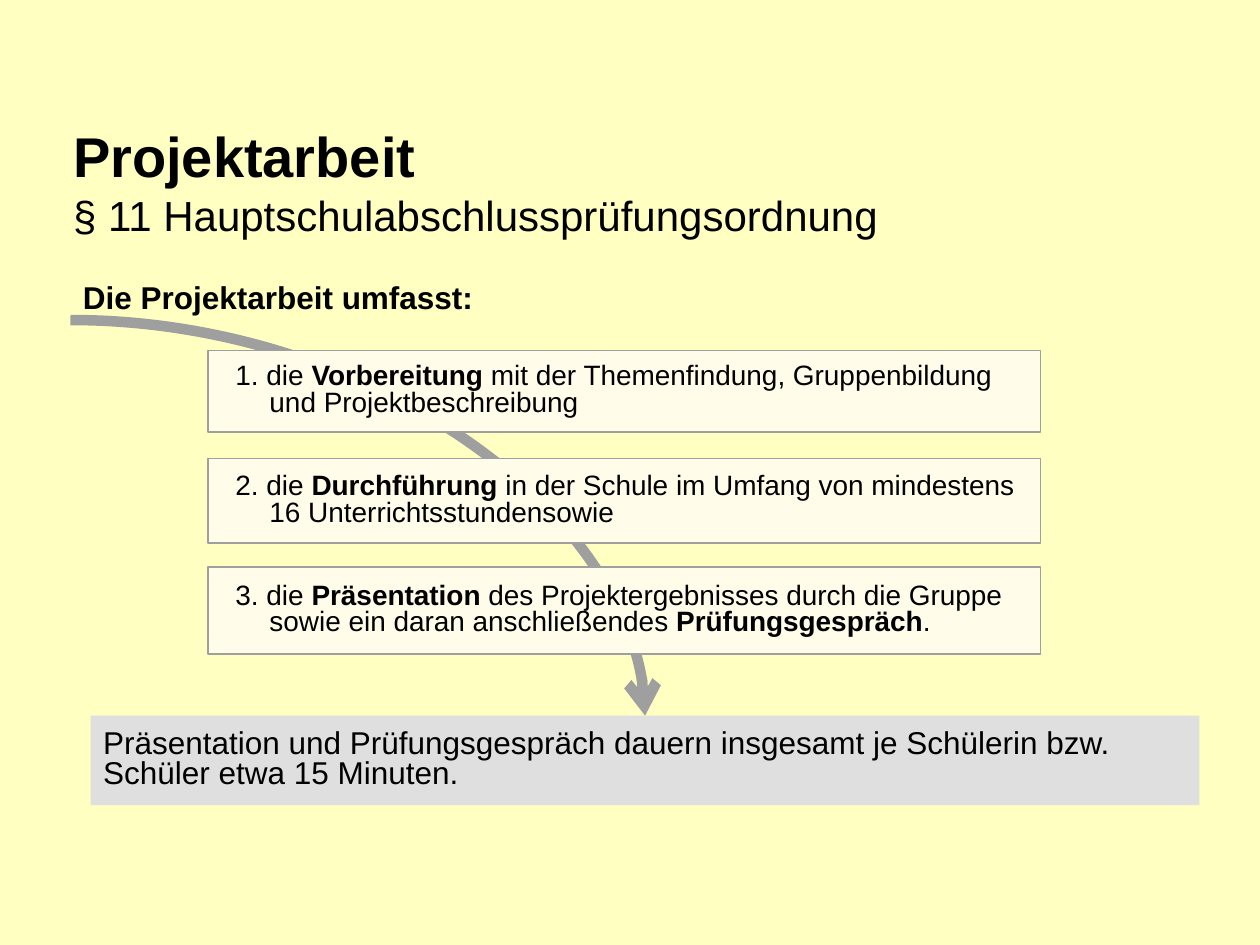
from lxml import etree
from pptx import Presentation
from pptx.dml.color import RGBColor
from pptx.enum.shapes import MSO_CONNECTOR, MSO_SHAPE
from pptx.enum.text import MSO_ANCHOR as ANCHOR, MSO_AUTO_SIZE as AUTO_SIZE, PP_ALIGN as ALIGN
from pptx.oxml.ns import qn
from pptx.util import Inches, Pt

BACKGROUND, TEXT, GREY = "FFFFC1", "000000", "9F9F9F"
STEP_FILL, NOTE_FILL = "FFFDE9", "DFDFDF"

# Each step: top, height and its (text, bold) pieces
STEPS = [
    (2.78, 0.65, [("1. die ", False), ("Vorbereitung", True),
                  (" mit der Themenfindung, Gruppenbildung und Projektbeschreibung", False)]),
    (3.64, 0.67, [("2. die ", False), ("Durchführung", True),
                  (" in der Schule im Umfang von mindestens 16 Unterrichtsstundensowie", False)]),
    (4.5, 0.69, [("3. die ", False), ("Präsentation", True),
                 (" des Projektergebnisses durch die Gruppe sowie ein daran anschließendes ", False),
                 ("Prüfungsgespräch", True), (".", False)]),
]


def color(hex_string):
    return RGBColor.from_string(hex_string)


def add_styled_run(paragraph, text, size, bold):
    run = paragraph.add_run()
    run.text = text
    run.font.name = "Arial"
    run.font.size = Pt(size)
    run.font.bold = bold
    run.font.color.rgb = color(TEXT)


def prepare_paragraph(shape, line_spacing):
    """Set up the text frame and return its first paragraph, left-aligned."""
    frame = shape.text_frame
    frame.word_wrap = True
    frame.auto_size = AUTO_SIZE.NONE
    frame.vertical_anchor = ANCHOR.MIDDLE
    paragraph = frame.paragraphs[0]
    paragraph.alignment = ALIGN.LEFT
    paragraph.line_spacing = line_spacing
    return paragraph


def add_box(slide, left, top, width, height, fill):
    box = slide.shapes.add_shape(MSO_SHAPE.RECTANGLE, Inches(left), Inches(top),
                                 Inches(width), Inches(height))
    box.shadow.inherit = False
    box.fill.solid()
    box.fill.fore_color.rgb = color(fill)
    box.line.fill.background()
    return box


def place_title(slide, left, top, width, height):
    title = slide.shapes.title
    title.left, title.top = Inches(left), Inches(top)
    title.width, title.height = Inches(width), Inches(height)
    paragraph = prepare_paragraph(title, 1.0)
    add_styled_run(paragraph, "Projektarbeit", 32, True)
    paragraph.add_line_break()
    add_styled_run(paragraph, "§ 11 Hauptschulabschlussprüfungsordnung", 24, False)


def add_curved_arrow(slide, start_x, start_y, end_x, end_y):
    arrow = slide.shapes.add_connector(MSO_CONNECTOR.CURVE, Inches(start_x), Inches(start_y),
                                       Inches(end_x), Inches(end_y))
    arrow.line.color.rgb = color(GREY)
    arrow.line.width = Pt(6)
    etree.SubElement(arrow.line._get_or_add_ln(), qn("a:tailEnd"), type="arrow")
    properties = arrow._element.spPr
    properties.find(qn("a:prstGeom")).set("prst", "curvedConnector2")
    etree.SubElement(properties, qn("a:effectLst"))


def add_intro(slide, left, top, width, height):
    intro = slide.shapes.add_textbox(Inches(left), Inches(top), Inches(width), Inches(height))
    add_styled_run(prepare_paragraph(intro, 0.8), "Die Projektarbeit umfasst:", 18, True)


def add_step(slide, left, top, width, height, pieces):
    step = add_box(slide, left, top, width, height, STEP_FILL)
    step.line.color.rgb = color(GREY)
    step.line.width = Pt(0.75)
    paragraph = prepare_paragraph(step, 0.8)
    indents = paragraph._p.get_or_add_pPr()
    indents.set("marL", str(Inches(0.39)))
    indents.set("indent", str(Inches(-0.27)))
    for text, bold in pieces:
        add_styled_run(paragraph, text, 16, bold)


def add_duration_note(slide, left, top, width, height):
    note = add_box(slide, left, top, width, height, NOTE_FILL)
    add_styled_run(prepare_paragraph(note, 0.8),
                   "Präsentation und Prüfungsgespräch dauern insgesamt je Schülerin bzw. "
                   "Schüler etwa 15 Minuten.", 18, False)


def main():
    presentation = Presentation()
    presentation.slide_width, presentation.slide_height = Inches(10), Inches(7.5)
    slide = presentation.slides.add_slide(presentation.slide_layouts[5])
    slide.background.fill.solid()
    slide.background.fill.fore_color.rgb = color(BACKGROUND)

    place_title(slide, 0.48, 0.85, 9, 1.17)
    add_curved_arrow(slide, 0.56, 2.54, 5.12, 5.68)
    add_intro(slide, 0.56, 2.11, 3.7, 0.55)
    for top, height, pieces in STEPS:
        add_step(slide, 1.65, top, 6.61, height, pieces)
    add_duration_note(slide, 0.72, 5.68, 8.8, 0.71)
    presentation.save("out.pptx")


if __name__ == "__main__":
    main()
